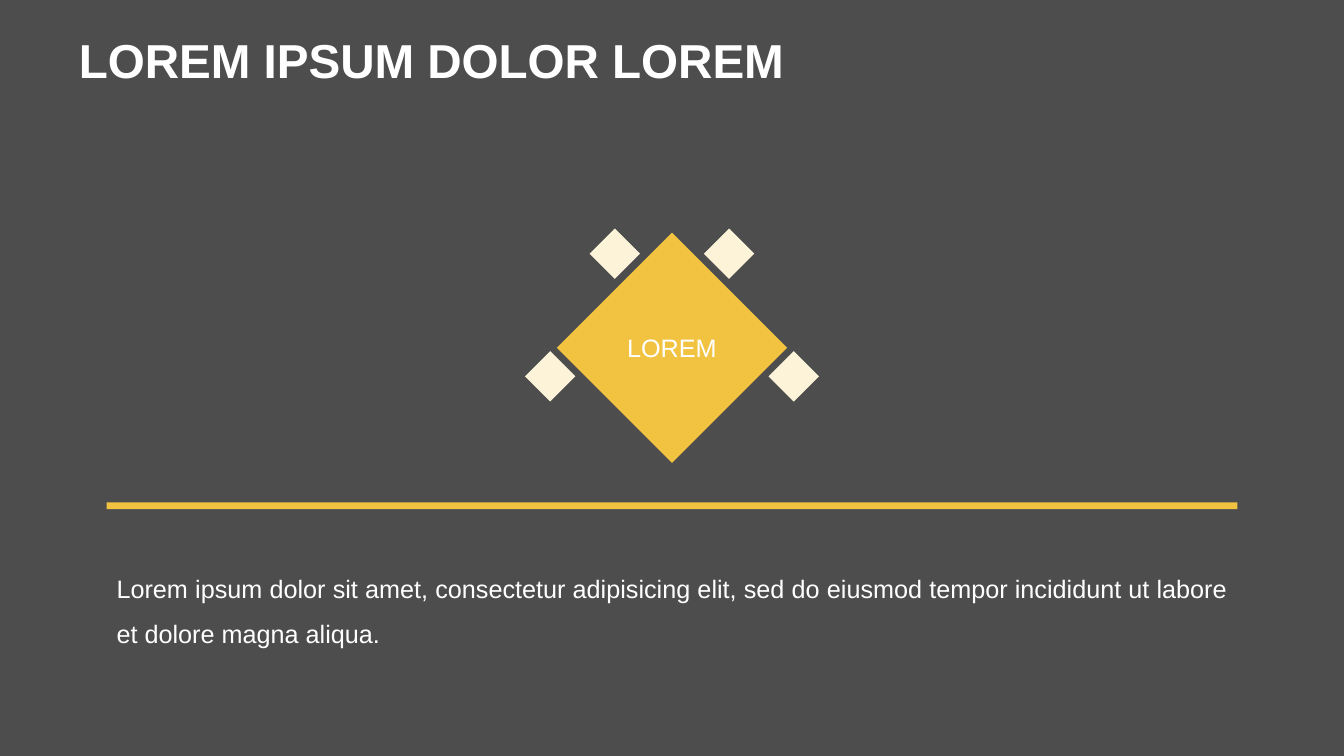
"""Build a slide with a central diamond, four satellites and a caption."""
from dataclasses import dataclass
from itertools import product

from pptx import Presentation
from pptx import util as u
from pptx.dml.color import RGBColor
from pptx.enum import shapes, text


@dataclass(frozen=True)
class Theme:
    """Colours, font and type sizes of the slide."""

    background: str = "4D4D4D"
    accent: str = "F1C341"
    pale: str = "FCF3D9"
    ink: str = "FFFFFF"
    font: str = "Arial"
    title_size: int = 34
    body_size: int = 18


THEME = Theme()
COLUMNS, ROWS = 16, 9
WIDTH, HEIGHT = u.Inches(13.33), u.Inches(7.5)
CENTRE = (8, 4.14)
CORE_SIZE, SATELLITE_SIZE = 2.74, 0.6
SATELLITE_OFFSETS = ((1.45, 0.34), (0.68, -1.12))
MARGIN, CONTENT_WIDTH = 1.27, 13.46


def frame(column, row, columns, rows):
    """Turn grid units into left, top, width and height."""
    across, down = WIDTH / COLUMNS, HEIGHT / ROWS
    return (int(column * across), int(row * down),
            int(columns * across), int(rows * down))


def write(box, wording, size, align, bold=False, spacing=None):
    """Put one formatted, vertically centred paragraph into a box."""
    box.text_frame.text = wording
    box.text_frame.word_wrap = True
    box.text_frame.auto_size = text.MSO_AUTO_SIZE.NONE
    box.text_frame.vertical_anchor = text.MSO_ANCHOR.MIDDLE
    para = box.text_frame.paragraphs[0]
    para.alignment = align
    para.line_spacing = spacing
    font = para.runs[0].font
    font.name, font.size, font.bold = THEME.font, u.Pt(size), bold
    font.color.rgb = RGBColor.from_string(THEME.ink)


def add_filled(page, kind, area, colour):
    """Add a flat preset shape without an outline."""
    shape = page.shapes.add_shape(kind, *frame(*area))
    shape.shadow.inherit = False
    shape.fill.solid()
    shape.fill.fore_color.rgb = RGBColor.from_string(colour)
    shape.line.fill.background()
    return shape


def add_diamond(page, centre, size, colour):
    """Add a diamond placed by its centre."""
    column, row = centre
    area = (column - size / 2, row - size / 2, size, size)
    return add_filled(page, shapes.MSO_SHAPE.DIAMOND, area, colour)


def add_emblem(page, label):
    """Add the labelled core and its mirrored satellites."""
    core = add_diamond(page, CENTRE, CORE_SIZE, THEME.accent)
    write(core, label, THEME.body_size, text.PP_ALIGN.CENTER)
    inner = core.text_frame
    inner.margin_left = inner.margin_right = 0
    inner.margin_top = inner.margin_bottom = 0
    for (across, down), side in product(SATELLITE_OFFSETS, (-1, 1)):
        centre = (CENTRE[0] + side * across, CENTRE[1] + down)
        satellite = add_diamond(page, centre, SATELLITE_SIZE, THEME.pale)
        satellite.rotation = 270


def add_title(page, wording):
    """Place and format the title placeholder."""
    title = page.shapes.title
    title.left, title.top, title.width, title.height = frame(0.82, 0.23, 14.38, 1.04)
    write(title, wording, THEME.title_size, text.PP_ALIGN.LEFT, True, 0.9)


def add_caption(page, wording):
    """Add the justified caption below the rule."""
    box = page.shapes.add_textbox(*frame(MARGIN, 6.37, CONTENT_WIDTH, 1.62))
    write(box, wording, THEME.body_size, text.PP_ALIGN.JUSTIFY, spacing=1.5)


def main():
    """Compose and save the deck."""
    deck = Presentation()
    deck.slide_width, deck.slide_height = WIDTH, HEIGHT
    page = deck.slides.add_slide(deck.slide_layouts.get_by_name("Title Only"))
    page.background.fill.solid()
    page.background.fill.fore_color.rgb = RGBColor.from_string(THEME.background)
    add_title(page, "LOREM IPSUM DOLOR LOREM")
    add_emblem(page, "LOREM")
    add_filled(page, shapes.MSO_SHAPE.RECTANGLE,
               (MARGIN, 5.98, CONTENT_WIDTH, 0.08), THEME.accent)
    add_caption(page, "Lorem ipsum dolor sit amet, consectetur adipisicing elit, "
                      "sed do eiusmod tempor incididunt ut labore et dolore "
                      "magna aliqua.")
    deck.save("out.pptx")


if __name__ == "__main__":
    main()
